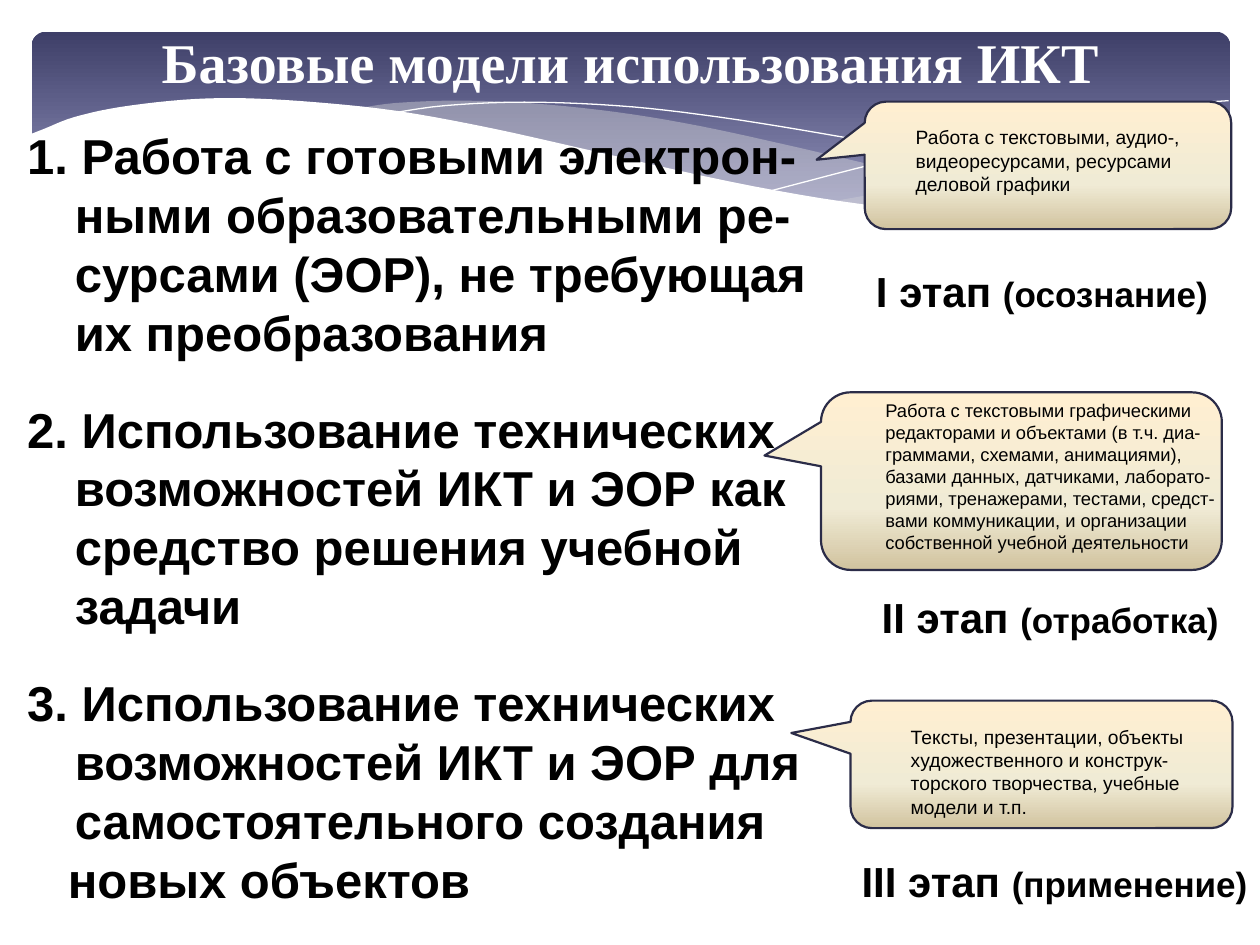
import typing
from dataclasses import dataclass
import lxml.etree
import pptx
import pptx.dml.color
import pptx.enum.shapes
import pptx.enum.text
import pptx.oxml.ns
import pptx.util

Point = tuple[float, float]
Box = tuple[float, float, float, float]
COLORS = {
    "band_top": "3E3F68", "band_bottom": "9394BE", "veil": "DEDEDE", "white": "FFFFFF",
    "black": "000000", "outline": "2B2C48",
    "callout_light": "FFEFD1", "callout_mid": "F0EBD5", "callout_dark": "D1C39F",
}
BAND_STOPS = [(0, "band_top"), (90, "band_bottom")]
CALLOUT_STOPS = [(0, "callout_light"), (65, "callout_mid"), (100, "callout_dark")]
TITLE_FONT = {"name": "Times New Roman", "size": pptx.util.Pt(32), "bold": True}
MODEL_FONT = {"name": "Arial", "size": pptx.util.Pt(28), "bold": True}
STAGE_FONT = {"name": "Arial", "size": pptx.util.Pt(24), "bold": True}
STAGE_NAME_FONT = {**STAGE_FONT, "size": pptx.util.Pt(20)}
FRAME = {"word_wrap": True, "vertical_anchor": pptx.enum.text.MSO_ANCHOR.TOP}
CENTERED = {"alignment": pptx.enum.text.PP_ALIGN.CENTER}
HANGING = 0.96

@dataclass
class Model:
    box: Box
    text: str
    tail: str = ""

@dataclass
class Stage:
    box: Box
    number: str
    name: str

@dataclass
class Callout:
    box: Box
    adjustments: tuple[float, float, float]
    note_box: Box
    note: str
    size: float

MODELS = [
    Model((0.3, 2.41, 16.51, 5.05), "1. Работа с готовыми электрон-ными образовательными "
          "ре-сурсами (ЭОР), не требующая их преобразования"),
    Model((0.3, 7.92, 16.13, 5.05), "2. Использование технических возможностей ИКТ и ЭОР "
          "как средство решения учебной задачи"),
    Model((0.3, 13.44, 16.94, 5.05), "3. Использование технических возможностей ИКТ и ЭОР "
          "для самостоятельного создания", "новых объектов"),
]
STAGES = [
    Stage((16.81, 5.23, 8.59, 1.3), "I этап ", "(осознание) "),
    Stage((17.32, 11.79, 7.9, 1.3), "II этап ", "(отработка) "),
    Stage((17.07, 17.12, 8.38, 1.3), "III этап ", "(применение) "),
]
CALLOUTS = [
    Callout((18.8, 5.66, 3.58, 8.08), (-0.144, 0.641, 0.167), (17.6, 7.92, 7.24, 3.4),
            "Работа с текстовыми графическими\vредакторами и объектами (в т.ч. диа-граммами, "
            "схемами, анимациями), базами данных, датчиками, лаборато-риями, тренажерами, "
            "тестами, средст-вами коммуникации, и организации собственной учебной деятельности",
            10.5),
    Callout((19.71, 11.56, 2.57, 7.7), (-0.246, 0.655, 0.167), (18.11, 14.5, 6.12, 1.78),
            "Тексты, презентации, объекты\vхудожественного и конструк-\v"
            "торского творчества, учебные\vмодели и т.п.", 11),
    Callout((19.84, -0.36, 2.57, 7.39), (-0.044, 0.631, 0.167), (18.21, 2.41, 6.12, 1.68),
            "Работа с текстовыми, аудио-,\nвидеоресурсами, ресурсами\nделовой графики", 11),
]
RIGHT_TOP = [(24.77, 2.39), (23.39, 2.64), (21.87, 3), (19.13, 3.63), (16.79, 4.06)]
RIGHT_BOTTOM = [(16.79, 4.06), (18.59, 4.27), (20.12, 4.37), (21.44, 4.34), (22.78, 4.19),
                (23.93, 3.91), (24.79, 3.58)]
MIDDLE_TOP = [(22.68, 4.24), (20.5, 3.91), (17.93, 3.4), (15.98, 2.95), (14.1, 2.54),
              (12.42, 2.26), (10.67, 2.08), (9.17, 2.03), (7.95, 2.08), (7.26, 2.18)]
MIDDLE_BOTTOM = [(7.26, 2.18), (9.19, 2.46), (11.4, 2.95), (14.38, 3.63), (16.51, 4.01),
                 (18.34, 4.27), (19.94, 4.37), (21.29, 4.37), (22.68, 4.24)]
FALLING_LINE = [(7.85, 2.29), (8.97, 2.13), (10.57, 2.06), (12.42, 2.13), (14.12, 2.31),
                (16.15, 2.62), (18.47, 3.05), (21.11, 3.68), (23.04, 4.22)]
RISING_LINE = [(15.57, 3.84), (17.65, 3.3), (19.71, 2.82), (22, 2.36), (23.47, 2.13),
               (24.77, 2.03)]
WAVE = [(24.82, 3.58), (23.62, 3.99), (22.23, 4.24), (20.55, 4.34), (18.9, 4.27), (16.97, 4.06),
        (14.71, 3.66), (12.07, 3.07), (9.93, 2.59), (8.03, 2.24), (6.35, 2.06), (4.9, 1.98),
        (3.71, 2.01), (2.41, 2.16), (1.5, 2.36), (0.91, 2.59), (0.58, 2.72)]
WAVE_BASE = [(0.58, 5.69), (24.82, 5.69)]

def rgb(color: str) -> pptx.dml.color.RGBColor:
    return pptx.dml.color.RGBColor.from_string(COLORS[color])

def cm(lengths: typing.Iterable[float]) -> list[int]:
    return [pptx.util.Cm(length) for length in lengths]

def apply(target: typing.Any, values: dict[str, typing.Any]) -> None:
    for name, value in values.items():
        setattr(target, name, value)

def write(paragraph: typing.Any, text: str, font: dict, color: str = "black") -> None:
    for index, line in enumerate(text.split("\v")):
        if index:
            paragraph.add_line_break()
        run = paragraph.add_run()
        run.text = line
        apply(run.font, font)
        run.font.color.rgb = rgb(color)

def add_frame(slide: typing.Any, box: Box) -> typing.Any:
    frame = slide.shapes.add_textbox(*cm(box)).text_frame
    apply(frame, FRAME)
    return frame

def fill_gradient(shape: typing.Any, stops: list[tuple[int, str]], angle: int) -> None:
    shape.fill.gradient()
    shape.fill.gradient_angle = -angle % 360
    stop_list = shape._element.spPr.find(".//" + pptx.oxml.ns.qn("a:gsLst"))
    stop_list.clear()
    for position, color in stops:
        stop = lxml.etree.SubElement(stop_list, pptx.oxml.ns.qn("a:gs"), pos=str(position * 1000))
        lxml.etree.SubElement(stop, pptx.oxml.ns.qn("a:srgbClr"), val=COLORS[color])

def smooth(points: list[Point], steps: int = 5) -> list[Point]:
    ends = [points[0], *points, points[-1]]
    curve = [points[0]]
    for corners in zip(ends, ends[1:], ends[2:], ends[3:]):
        for t in (step / steps for step in range(1, steps + 1)):
            curve.append(tuple(
                q + t / 2 * (r - p + t * (2 * p - 5 * q + 4 * r - s + t * (3 * (q - r) + s - p)))
                for p, q, r, s in zip(*corners)))
    return curve

def add_outline(slide: typing.Any, points: list[Point], close: bool) -> typing.Any:
    start, *rest = [cm(point) for point in points]
    builder = slide.shapes.build_freeform(*start)
    builder.add_line_segments(rest, close=close)
    outline = builder.convert_to_shape()
    outline.shadow.inherit = False
    return outline

def add_area(slide: typing.Any, points: list[Point], color: str, opacity: int = 100) -> None:
    area = add_outline(slide, points, True)
    area.fill.solid()
    area.fill.fore_color.rgb = rgb(color)
    area.line.fill.background()
    fill_color = area._element.spPr.find(".//" + pptx.oxml.ns.qn("a:srgbClr"))
    lxml.etree.SubElement(fill_color, pptx.oxml.ns.qn("a:alpha"), val=str(opacity * 1000))

def add_hairline(slide: typing.Any, points: list[Point]) -> None:
    hairline = add_outline(slide, smooth(points), False)
    hairline.fill.background()
    hairline.line.color.rgb = rgb("white")
    hairline.line.width = 0

def add_header(slide: typing.Any) -> None:
    band = slide.shapes.add_shape(pptx.enum.shapes.MSO_SHAPE.ROUNDED_RECTANGLE,
                                  *cm((0.64, 0.64, 24.16, 3.96)))
    band.adjustments[0] = 0.071
    band.shadow.inherit = False
    band.line.fill.background()
    fill_gradient(band, BAND_STOPS, 90)
    add_area(slide, smooth(RIGHT_TOP) + smooth(RIGHT_BOTTOM), "veil", 29)
    add_area(slide, smooth(MIDDLE_TOP) + smooth(MIDDLE_BOTTOM), "veil", 40)
    add_hairline(slide, FALLING_LINE)
    add_hairline(slide, RISING_LINE)
    add_area(slide, smooth(WAVE) + WAVE_BASE, "white")

def add_title(slide: typing.Any) -> None:
    title = slide.shapes.title
    apply(title, dict(zip(("left", "top", "width", "height"), cm((0.91, 0.43, 23.6, 1.63)))))
    apply(title.text_frame, FRAME)
    heading = title.text_frame.paragraphs[0]
    apply(heading, CENTERED)
    write(heading, "Базовые модели использования ИКТ", TITLE_FONT, "white")
    title._element.getparent().append(title._element)

def add_model(slide: typing.Any, model: Model) -> None:
    frame = add_frame(slide, model.box)
    statement = frame.paragraphs[0]
    write(statement, model.text, MODEL_FONT)
    statement._p.get_or_add_pPr().set("marL", str(pptx.util.Cm(HANGING)))
    statement._p.get_or_add_pPr().set("indent", str(pptx.util.Cm(-HANGING)))
    if model.tail:
        tail = frame.add_paragraph()
        write(tail, model.tail, MODEL_FONT)
        tail._p.get_or_add_pPr().set("marL", str(pptx.util.Cm(0.82)))

def add_stage(slide: typing.Any, stage: Stage) -> None:
    label = add_frame(slide, stage.box).paragraphs[0]
    apply(label, CENTERED)
    write(label, stage.number, STAGE_FONT)
    write(label, stage.name, STAGE_NAME_FONT)

def add_callout(slide: typing.Any, callout: Callout) -> None:
    bubble = slide.shapes.add_shape(pptx.enum.shapes.MSO_SHAPE.ROUNDED_RECTANGULAR_CALLOUT,
                                    *cm(callout.box))
    for index, value in enumerate(callout.adjustments):
        bubble.adjustments[index] = value
    bubble.rotation = 90
    bubble.shadow.inherit = False
    fill_gradient(bubble, CALLOUT_STOPS, 0)
    bubble.line.color.rgb = rgb("outline")
    bubble.line.width = pptx.util.Pt(1.25)
    frame = add_frame(slide, callout.note_box)
    for index, text in enumerate(callout.note.split("\n")):
        note = frame.add_paragraph() if index else frame.paragraphs[0]
        write(note, text, {"name": "Arial", "size": pptx.util.Pt(callout.size)})

deck = pptx.Presentation()
apply(deck, dict(zip(("slide_width", "slide_height"), cm((25.4, 19.05)))))
slide = deck.slides.add_slide(deck.slide_layouts[5])
add_header(slide)
add_title(slide)
for model, stage in zip(MODELS, STAGES):
    add_model(slide, model)
    add_stage(slide, stage)
for callout in CALLOUTS:
    add_callout(slide, callout)
deck.save("out.pptx")
